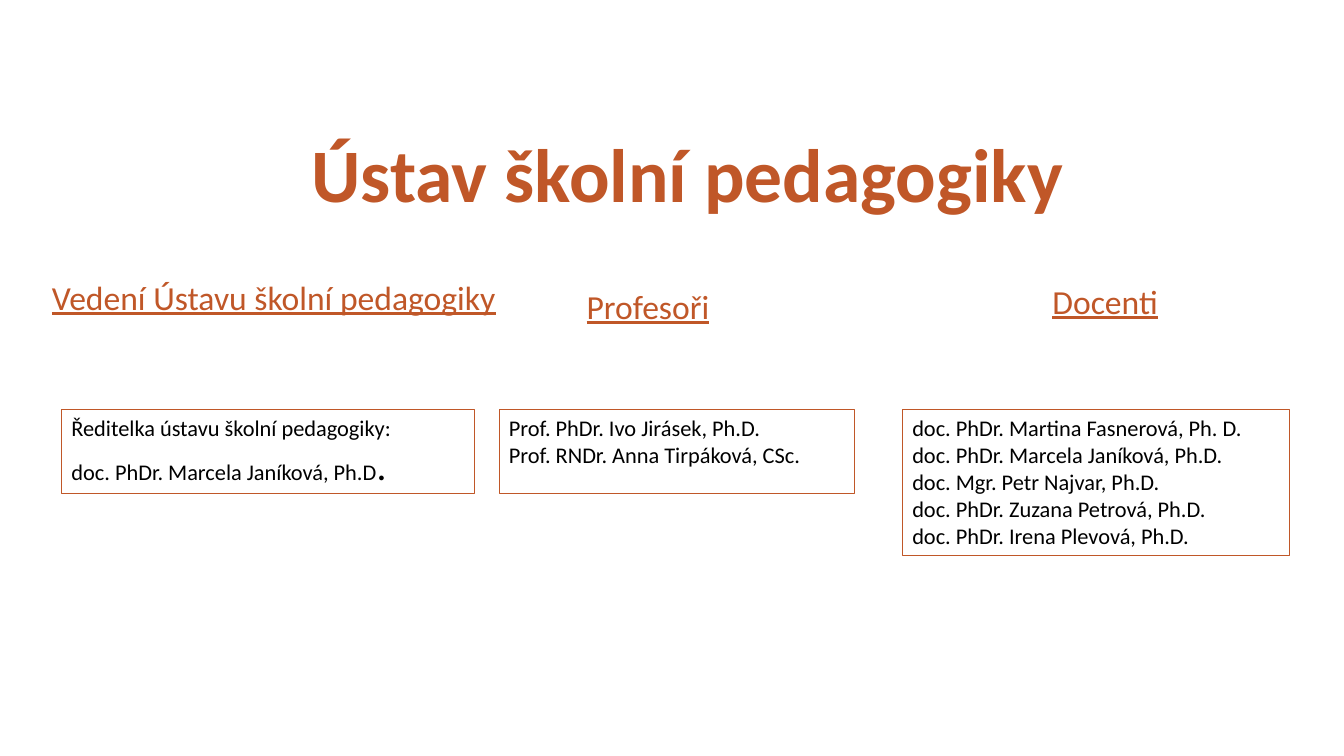
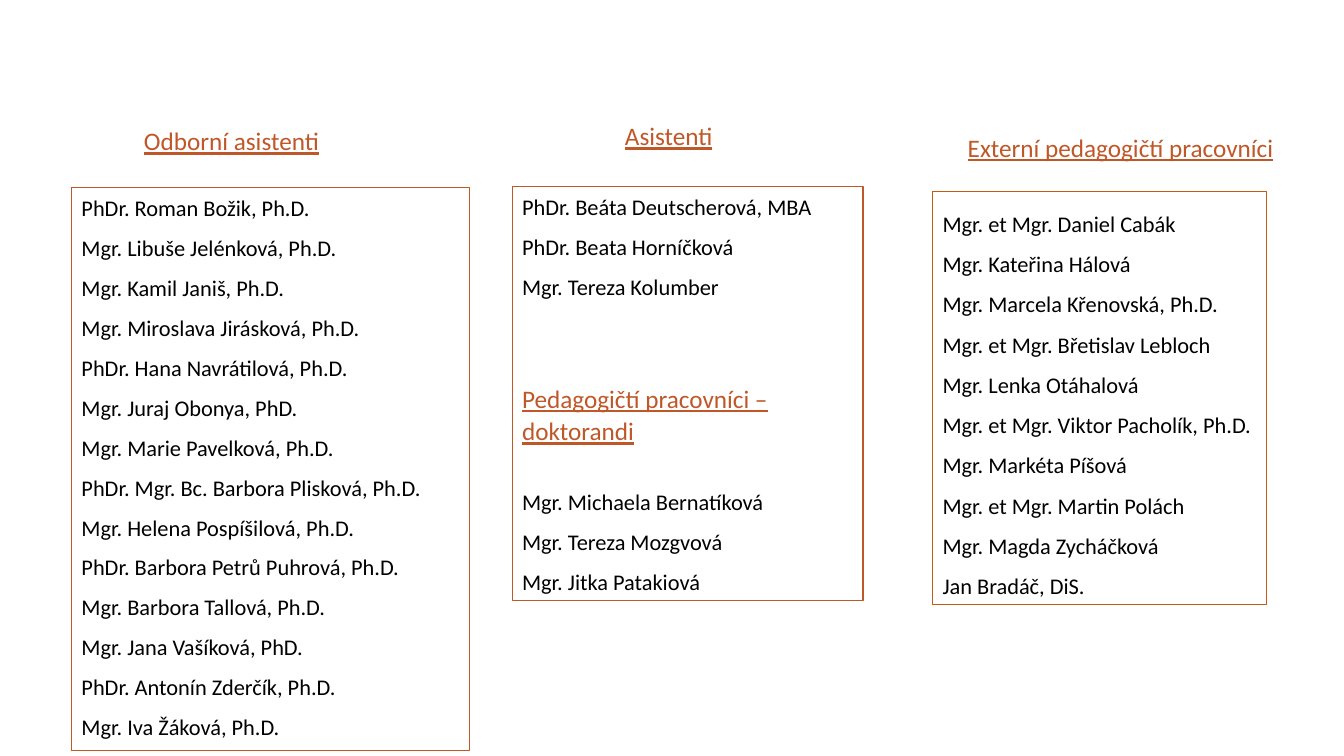
from dataclasses import dataclass

from pptx import Presentation
from pptx.dml.color import RGBColor
from pptx.enum.shapes import MSO_SHAPE
from pptx.enum.text import MSO_ANCHOR, PP_ALIGN
from pptx.util import Inches, Pt


@dataclass(frozen=True)
class Theme:
    font: str = "Calibri"
    accent: RGBColor = RGBColor(0xC0, 0x57, 0x28)
    accent_deep: RGBColor = RGBColor(0xC5, 0x5A, 0x11)
    ink: RGBColor = RGBColor(0x00, 0x00, 0x00)
    paper: RGBColor = RGBColor(0xFF, 0xFF, 0xFF)
    title_size: int = 54
    heading_size: int = 24
    subheading_size: int = 18
    body_size: int = 16
    stop_size: int = 28
    border: float = 0.75
    tight: float = 0.9
    loose: float = 1.07
    gap: int = 8


class Deck:
    """Holds the theme, the presentation and the current slide."""

    def __init__(self, theme):
        self.theme = theme
        self.presentation = Presentation()
        self.presentation.slide_width = Inches(13.33)
        self.presentation.slide_height = Inches(7.5)
        self.slide = None

    def new_slide(self):
        self.slide = self.presentation.slides.add_slide(
            self.presentation.slide_layouts[6])

    def run(self, paragraph, text, size, color, bold=False, underline=False):
        run = paragraph.add_run()
        run.text = text
        font = run.font
        font.name, font.size, font.bold = self.theme.font, Pt(size), bold
        font.underline = underline
        font.color.rgb = color

    def frame(self, shape):
        frame = shape.text_frame
        frame.word_wrap = True
        frame.vertical_anchor = MSO_ANCHOR.TOP
        return frame

    def label(self, text, place, size, spacing, align, **style):
        box = self.slide.shapes.add_textbox(*map(Inches, place))
        paragraph = self.frame(box).paragraphs[0]
        paragraph.alignment = align
        paragraph.line_spacing = spacing
        self.run(paragraph, text, size, self.theme.accent, **style)

    def title(self, text, place):
        self.label(text, place, self.theme.title_size, self.theme.tight,
                   PP_ALIGN.CENTER, bold=True)

    def heading(self, text, place, size, spacing=None, align=PP_ALIGN.LEFT):
        self.label(text, place, size, spacing or self.theme.tight, align,
                   underline=True)

    def panel(self, place, line=None, fill=None):
        """Draw a bordered rectangle and return its text frame."""
        panel = self.slide.shapes.add_shape(
            MSO_SHAPE.RECTANGLE, *map(Inches, place))
        panel.shadow.inherit = False
        if fill is None:
            panel.fill.background()
        else:
            panel.fill.solid()
            panel.fill.fore_color.rgb = fill
        panel.line.color.rgb = line or self.theme.accent
        panel.line.width = Pt(self.theme.border)
        return self.frame(panel)

    def paragraph(self, frame, spacing=1.0, after=0, before=0):
        first = frame.paragraphs[0]
        paragraph = frame.add_paragraph() if first.runs else first
        paragraph.alignment = PP_ALIGN.LEFT
        paragraph.line_spacing = spacing
        paragraph.space_before = Pt(before)
        paragraph.space_after = Pt(after)
        return paragraph

    def names(self, frame, names, spacing=1.0, after=0, before=0):
        """Add one paragraph per name; 'before' opens the group."""
        for index, name in enumerate(names):
            paragraph = self.paragraph(frame, spacing, after,
                                       0 if index else before)
            self.run(paragraph, name, self.theme.body_size, self.theme.ink)


def leadership_slide(deck):
    theme = deck.theme
    deck.new_slide()
    deck.title("Ústav školní pedagogiky", (1.82, 1.31, 10, 1.04))

    # Column headings
    deck.heading("Vedení Ústavu školní pedagogiky", (0.39, 2.74, 4.65, 0.52),
                 theme.heading_size, align=PP_ALIGN.CENTER)
    deck.heading("Profesoři", (5.72, 2.83, 2.5, 0.43), theme.heading_size)
    deck.heading("Docenti", (10.34, 2.78, 2.5, 0.43), theme.heading_size)

    # Director, with an enlarged closing full stop
    top = 4.06
    director = deck.panel((0.61, top, 4.1, 0.84))
    deck.names(director, ["Ředitelka ústavu školní pedagogiky:",
                          "doc. PhDr. Marcela Janíková, Ph.D"])
    deck.run(director.paragraphs[-1], ".", theme.stop_size, theme.ink)

    # Professors and associate professors
    deck.names(deck.panel((4.95, top, 3.53, 0.84)), [
        "Prof. PhDr. Ivo Jirásek, Ph.D.",
        "Prof. RNDr. Anna Tirpáková, CSc.",
    ])
    deck.names(deck.panel((8.95, top, 3.84, 1.45)), [
        "doc. PhDr. Martina Fasnerová, Ph. D.",
        "doc. PhDr. Marcela Janíková, Ph.D.",
        "doc. Mgr. Petr Najvar, Ph.D.",
        "doc. PhDr. Zuzana Petrová, Ph.D.",
        "doc. PhDr. Irena Plevová, Ph.D.",
    ])


def staff_slide(deck):
    theme = deck.theme
    size = theme.subheading_size
    spaced = {"spacing": theme.loose, "after": theme.gap}
    deck.new_slide()

    # Column headings
    deck.heading("Asistenti", (6.1, 1.18, 2.09, 0.67), size)
    deck.heading("Odborní asistenti", (1.33, 1.23, 3.46, 0.67), size)
    deck.heading("Externí pedagogičtí pracovníci", (9.5, 1.24, 3.5, 0.41),
                 size, theme.loose)

    # Assistant professors
    deck.names(deck.panel((0.71, 1.86, 3.95, 5.59)), [
        "PhDr. Roman Božik, Ph.D.",
        "Mgr. Libuše Jelénková, Ph.D.",
        "Mgr. Kamil Janiš, Ph.D.",
        "Mgr. Miroslava Jirásková, Ph.D.",
        "PhDr. Hana Navrátilová, Ph.D.",
        "Mgr. Juraj Obonya, PhD.",
        "Mgr. Marie Pavelková, Ph.D.",
        "PhDr. Mgr. Bc. Barbora Plisková, Ph.D.",
        "Mgr. Helena Pospíšilová, Ph.D.",
        "PhDr. Barbora Petrů Puhrová, Ph.D.",
        "Mgr. Barbora Tallová, Ph.D.",
        "Mgr. Jana Vašíková, PhD.",
        "PhDr. Antonín Zderčík, Ph.D.",
        "Mgr. Iva Žáková, Ph.D.",
    ], **spaced)

    # Assistants, then doctoral students under their own heading
    assistants = deck.panel((5.08, 1.85, 3.48, 4.11))
    deck.names(assistants, [
        "PhDr. Beáta Deutscherová, MBA",
        "PhDr. Beata Horníčková",
        "Mgr. Tereza Kolumber",
    ], **spaced)
    deck.run(deck.paragraph(assistants, before=50, **spaced),
             "Pedagogičtí pracovníci – doktorandi", size, theme.accent,
             underline=True)
    deck.names(assistants, [
        "Mgr. Michaela Bernatíková",
        "Mgr. Tereza Mozgvová",
        "Mgr. Jitka Patakiová",
    ], before=21, **spaced)

    # External staff
    external = deck.panel((9.25, 1.9, 3.31, 4.1), theme.accent_deep,
                          theme.paper)
    deck.names(external, [
        "Mgr. et Mgr. Daniel Cabák",
        "Mgr. Kateřina Hálová",
        "Mgr. Marcela Křenovská, Ph.D.",
        "Mgr. et Mgr. Břetislav Lebloch",
        "Mgr. Lenka Otáhalová",
        "Mgr. et Mgr. Viktor Pacholík, Ph.D.",
        "Mgr. Markéta Píšová",
        "Mgr. et Mgr. Martin Polách",
        "Mgr. Magda Zycháčková",
        "Jan Bradáč, DiS.",
    ], spacing=1.5)


def main():
    deck = Deck(Theme())
    leadership_slide(deck)
    staff_slide(deck)
    deck.presentation.save("out.pptx")


if __name__ == "__main__":
    main()
